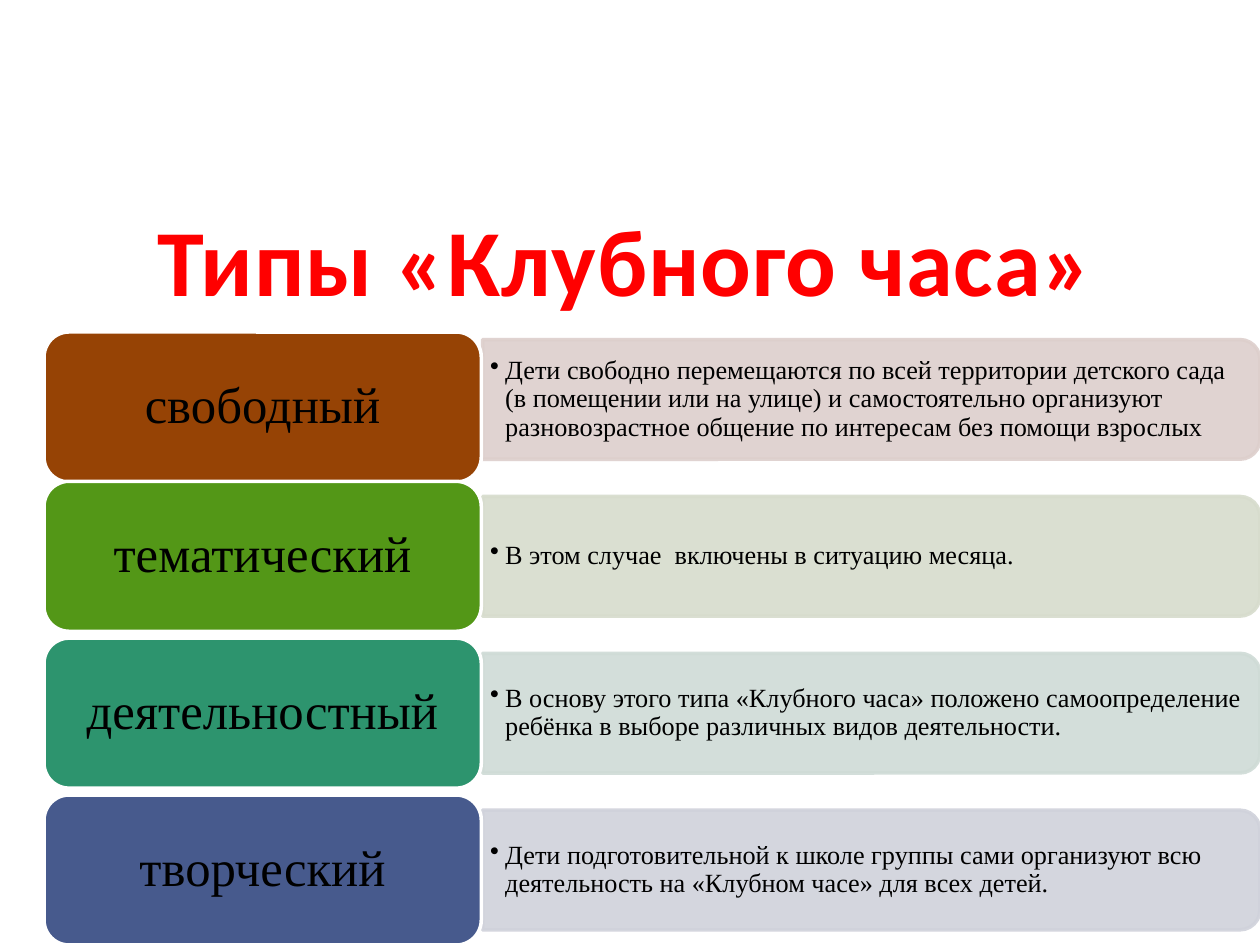
"""Builds a slide listing the four types of club hour with their descriptions."""
from lxml import etree
from pptx import Presentation
from pptx.dml.color import RGBColor
from pptx.enum.shapes import MSO_SHAPE
from pptx.enum.text import MSO_ANCHOR, PP_ALIGN
from pptx.oxml.ns import qn
from pptx.util import Inches, Pt

ROUNDED, TAB = MSO_SHAPE.ROUNDED_RECTANGLE, MSO_SHAPE.ROUND_2_SAME_RECTANGLE
MIDDLE, BOTTOM = MSO_ANCHOR.MIDDLE, MSO_ANCHOR.BOTTOM
CENTER, LEFT = PP_ALIGN.CENTER, PP_ALIGN.LEFT

TITLE = "Типы «Клубного часа»"
TYPES = [
    ("свободный", "Дети свободно перемещаются по всей территории детского сада "
     "(в помещении или на улице) и самостоятельно организуют разновозрастное "
     "общение по интересам без помощи взрослых"),
    ("тематический", "В этом случае  включены в ситуацию месяца."),
    ("деятельностный", "В основу этого типа «Клубного часа» положено "
     "самоопределение ребёнка в выборе различных видов деятельности."),
    ("творческий", "Дети подготовительной к школе группы сами организуют всю "
     "деятельность на «Клубном часе» для всех детей."),
]
COLORS = {
    "title": "FF0000", "text": "000000", "border": "FFFFFF",
    "labels": ["964305", "539717", "2D946E", "475A8D"],
    "bars": ["DDCFCC", "D7DCCD", "CFDBD6", "D0D2DB"],
}
FORMATS = {
    "title": {"name": "Calibri", "size": Pt(54), "bold": True},
    "label": {"name": "Times New Roman", "size": Pt(29)},
    "description": {"name": "Times New Roman", "size": Pt(15)},
}
WIDTH, HEIGHT = 10, 7.5
LABEL_LEFT, LABEL_WIDTH, LABEL_HEIGHT = 0.35, 3.47, 1.19
BAR_LEFT, BAR_WIDTH, BAR_HEIGHT = 3.83, 6.17, 0.95
TEXT_WIDTH, TEXT_HEIGHT = 6.13, 0.86
FIRST_CENTER, LAST_CENTER = 3.17, HEIGHT - LABEL_HEIGHT / 2
PITCH = (LAST_CENTER - FIRST_CENTER) / (len(TYPES) - 1)
FIRST_LABEL_DROP = 0.06


def box(left, center, width, height):
    return [Inches(v) for v in (left, center - height / 2, width, height)]


def write(holder, text, role, color, align, anchor, margins, spacing=0.9):
    frame = holder.text_frame
    frame.word_wrap = True
    frame.vertical_anchor = anchor
    for side, margin in zip(("left", "top", "right", "bottom"), margins):
        setattr(frame, f"margin_{side}", Inches(margin))
    paragraph = frame.paragraphs[0]
    paragraph.alignment = align
    paragraph.line_spacing = spacing
    run = paragraph.add_run()
    run.text = text
    for attribute, value in FORMATS[role].items():
        setattr(run.font, attribute, value)
    run.font.color.rgb = RGBColor.from_string(color)
    return paragraph


def add_panel(slide, preset, area, fill, border):
    panel = slide.shapes.add_shape(preset, *area)
    panel.shadow.inherit = False
    panel.fill.solid()
    panel.fill.fore_color.rgb = RGBColor.from_string(fill)
    panel.line.color.rgb = RGBColor.from_string(border)
    panel.line.width = Pt(2)
    return panel


def add_bar(slide, center, color):
    area = box(BAR_LEFT + (BAR_WIDTH - BAR_HEIGHT) / 2, center, BAR_HEIGHT, BAR_WIDTH)
    bar = add_panel(slide, TAB, area, color, color)
    bar.rotation = 90
    for tint in bar._element.spPr.iter(qn("a:srgbClr")):
        etree.SubElement(tint, qn("a:alpha"), val="90000")


def add_description(slide, center, text):
    holder = slide.shapes.add_textbox(*box(BAR_LEFT, center, TEXT_WIDTH, TEXT_HEIGHT))
    paragraph = write(holder, text, "description", COLORS["text"], LEFT, MIDDLE,
                      (0.06, 0.03, 0.06, 0.03))
    properties = paragraph._p.get_or_add_pPr()
    properties.set("marL", str(Inches(0.12)))
    properties.set("indent", str(Inches(-0.12)))
    etree.SubElement(properties, qn("a:buChar"), char="•")


def add_label(slide, center, text, color):
    area = box(LABEL_LEFT, center, LABEL_WIDTH, LABEL_HEIGHT)
    label = add_panel(slide, ROUNDED, area, color, COLORS["border"])
    write(label, text, "label", COLORS["text"], CENTER, MIDDLE, (0.18, 0.12, 0.18, 0.12))


def main():
    deck = Presentation()
    deck.slide_width, deck.slide_height = Inches(WIDTH), Inches(HEIGHT)
    slide = deck.slides.add_slide(deck.slide_layouts[6])
    heading = slide.shapes.add_textbox(*box(0.47, 2.5, 9, 0.94))
    title = write(heading, TITLE, "title", COLORS["title"], CENTER, BOTTOM,
                  (0.1, 0, 0.1, 0.47), 1.0)
    title.runs[0]._r.get_or_add_rPr().set("spc", "50")
    for row, (name, description) in enumerate(TYPES):
        center = FIRST_CENTER + row * PITCH
        add_bar(slide, center, COLORS["bars"][row])
        add_description(slide, center, description)
        drop = 0 if row else FIRST_LABEL_DROP
        add_label(slide, center + drop, name, COLORS["labels"][row])
    deck.save("out.pptx")


if __name__ == "__main__":
    main()
